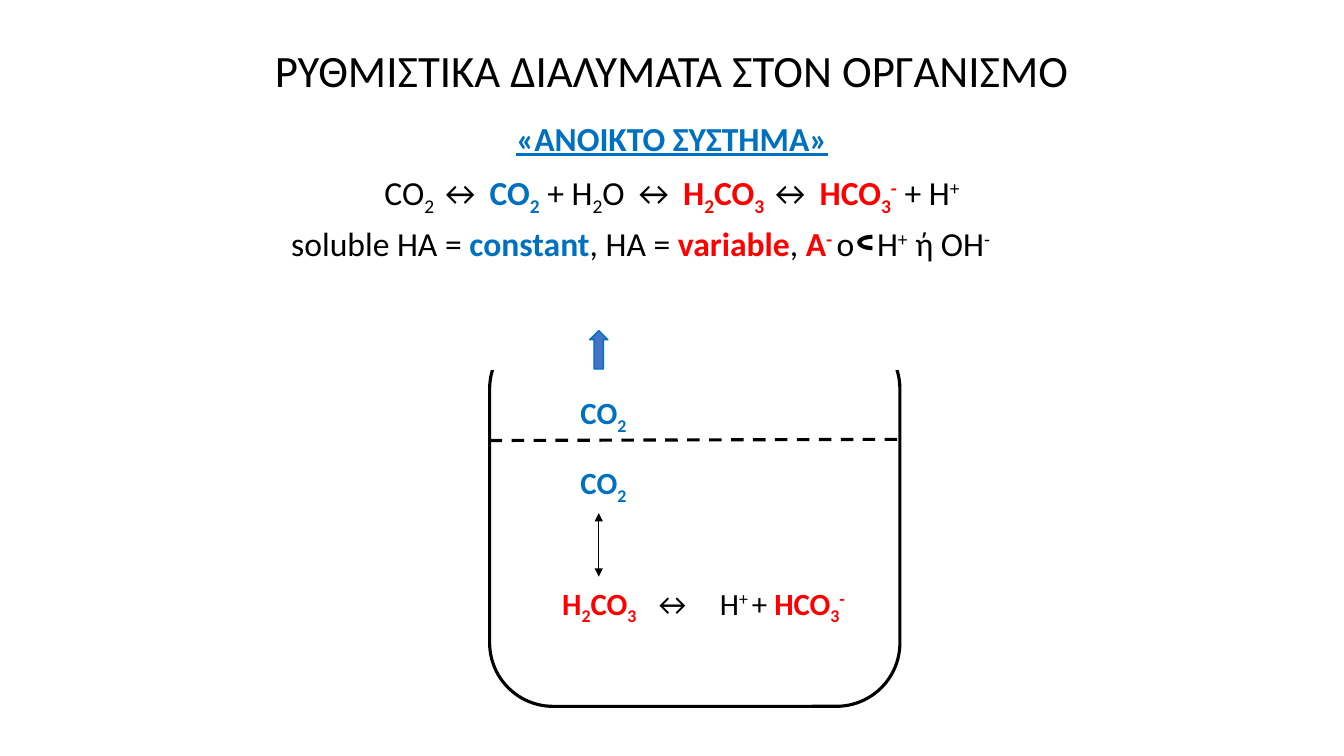
import pptx
import pptx.util
import pptx.dml.color
import pptx.enum.dml
import pptx.enum.shapes
import pptx.enum.text
import pptx.oxml.ns
import lxml.etree

Cm, Pt = pptx.util.Cm, pptx.util.Pt
Kind = pptx.enum.shapes.MSO_SHAPE
Align = pptx.enum.text.PP_ALIGN
qn = pptx.oxml.ns.qn
COLORS = {"black": "000000", "blue": "0070C0", "red": "FF0000",
          "fill": "4472C4", "white": "FFFFFF"}
SUB, SUP = -25000, 30000


def color(name):
    return pptx.dml.color.RGBColor.from_string(COLORS[name])


def add_runs(para, size, runs):
    """Each run: text, colour, baseline shift, letter spacing in points."""
    for text, tone, *rest in runs:
        base, gap = (rest + [0, 0])[:2]
        run = para.add_run()
        run.text = text
        font = run.font
        font.name, font.size = "Calibri", Pt(size)
        font.color.rgb = color(tone)
        font.bold = tone != "black"
        props = run._r.get_or_add_rPr()
        if base:
            props.set("baseline", str(base))
        if gap:
            props.set("spc", str(int(gap * 100)))


deck = pptx.Presentation()
deck.slide_width, deck.slide_height = Cm(33.87), Cm(19.05)
slide = deck.slides.add_slide(deck.slide_layouts[6])
shapes = slide.shapes

# Title
title = shapes.add_textbox(0, 0, Cm(33.87), Cm(3.68)).text_frame
title.word_wrap = True
title.vertical_anchor = pptx.enum.text.MSO_ANCHOR.MIDDLE
para = title.paragraphs[0]
para.alignment, para.line_spacing = Align.CENTER, 0.9
add_runs(para, 32, [("ΡΥΘΜΙΣΤΙΚΑ ΔΙΑΛΥΜΑΤΑ ΣΤΟΝ ΟΡΓΑΝΙΣΜΟ", "black")])

# Heading and equations
acid = [("H", "red"), ("2", "red", SUB), ("CO", "red")]
base = [("HCO", "red"), ("3", "red", SUB), ("-", "red", SUP)]
gas = [("CO", "blue"), ("2", "blue", SUB)]
lines = [
    [("«ANOIKTO ΣΥΣΤΗΜΑ»", "blue")],
    [("CO", "black"), ("2 ", "black", SUB), ("↔ ", "black"), *gas,
     (" + H", "black"), ("2", "black", SUB), ("O ↔ ", "black"),
     *acid, ("3 ", "red", SUB), ("↔ ", "black"), *base,
     (" + H", "black"), ("+", "black", SUP)],
    [("soluble HA = ", "black"), ("constant", "blue"), (", HA = ", "black"),
     ("variable", "red"), (", ", "black"), ("A", "red"), ("- ", "red", SUP),
     ("o", "black"), (" ", "black", 0, 10.8), ("H", "black"),
     ("+", "black", SUP), (" ή ΟΗ", "black"), ("-", "black", SUP)],
]
body = shapes.add_textbox(0, Cm(2.95), Cm(33.87), Cm(4.04)).text_frame
body.word_wrap = True
for row, runs in enumerate(lines):
    para = body.add_paragraph() if row else body.paragraphs[0]
    para.line_spacing = 0.9
    para.alignment = Align.CENTER if row < 2 else Align.LEFT
    if row:
        para.space_before = Pt(10)
    add_runs(para, 24, runs)
body.paragraphs[0].runs[0].font.underline = True
para._p.get_or_add_pPr().set("marL", str(Cm(7.09)))

# Labels in the vessel
labels = [
    (14.38, 11.56, 1.7, gas),
    (14.38, 9.8, 1.7, gas),
    (13.92, 14.6, 8.18,
     [*acid, ("3", "red", SUB), (" ", "red", SUB, 8.6), ("↔", "black"),
      (" ", "black", 0, 14.9), ("H", "black"), ("+ ", "black", SUP),
      ("+ ", "black"), *base]),
]
for left, top, width, runs in labels:
    frame = shapes.add_textbox(Cm(left), Cm(top), Cm(width), Cm(1.19)).text_frame
    frame.word_wrap = False
    frame.auto_size = pptx.enum.text.MSO_AUTO_SIZE.SHAPE_TO_FIT_TEXT
    add_runs(frame.paragraphs[0], 22, runs)

# Vessel, white covers over its rim, escape arrow and bond arc
parts = [
    (Kind.ROUNDED_RECTANGLE, 12.34, 8.2, 10.34, 9.6, None, "black", 2.25, 0),
    (Kind.RECTANGLE, 11.94, 7.75, 11.81, 1.57, "white", "white", 1, 0),
    (Kind.UP_ARROW, 14.86, 8.33, 0.46, 0.97, "fill", "blue", 1, 0),
    (Kind.RECTANGLE, 18.59, 7.65, 11.99, 1.45, "white", "white", 1, 0),
    (Kind.BLOCK_ARC, 21.79, 5.74, 0.38, 0.74, "black", "black", 0.25, 270),
]
for kind, left, top, width, height, fill, edge, weight, turn in parts:
    shape = shapes.add_shape(kind, Cm(left), Cm(top), Cm(width), Cm(height))
    shape.shadow.inherit = False
    shape.rotation = turn
    if fill:
        shape.fill.solid()
        shape.fill.fore_color.rgb = color(fill)
    else:
        shape.fill.background()
    shape.line.color.rgb = color(edge)
    shape.line.width = Pt(weight)

# Water level and exchange arrow
links = [(12.34, 11.1, 22.68, 11.07, 2.25, True),
         (15.09, 12.93, 15.09, 14.53, 0.5, False)]
for x1, y1, x2, y2, weight, dashed in links:
    link = shapes.add_connector(pptx.enum.shapes.MSO_CONNECTOR.STRAIGHT,
                                Cm(x1), Cm(y1), Cm(x2), Cm(y2))
    link.line.color.rgb = color("black")
    link.line.width = Pt(weight)
    if dashed:
        link.line.dash_style = pptx.enum.dml.MSO_LINE.DASH
    else:
        stroke = link.line._get_or_add_ln()
        for end in ("a:headEnd", "a:tailEnd"):
            lxml.etree.SubElement(stroke, qn(end)).set("type", "triangle")
    lxml.etree.SubElement(link._element.spPr, qn("a:effectLst"))

deck.save("out.pptx")
